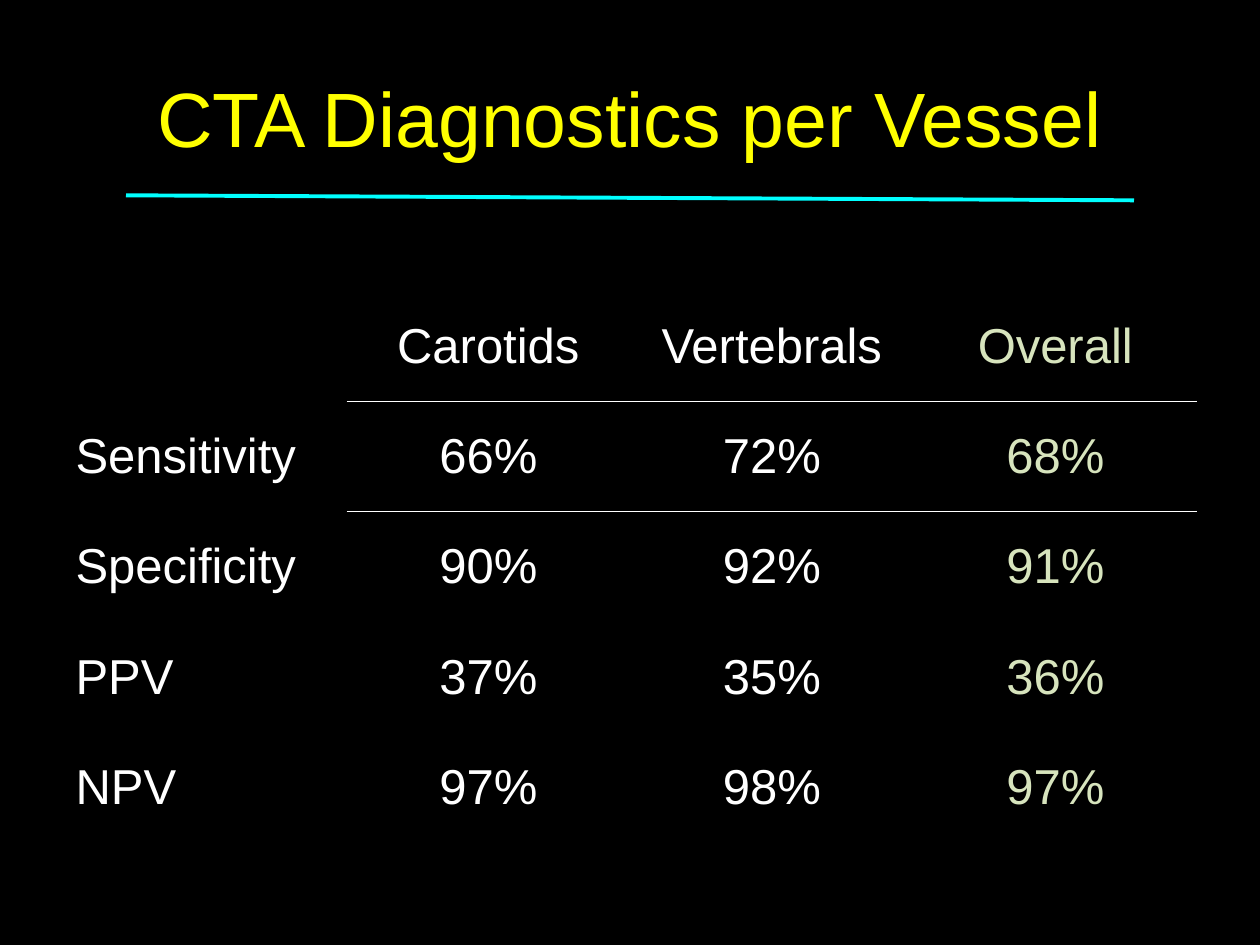
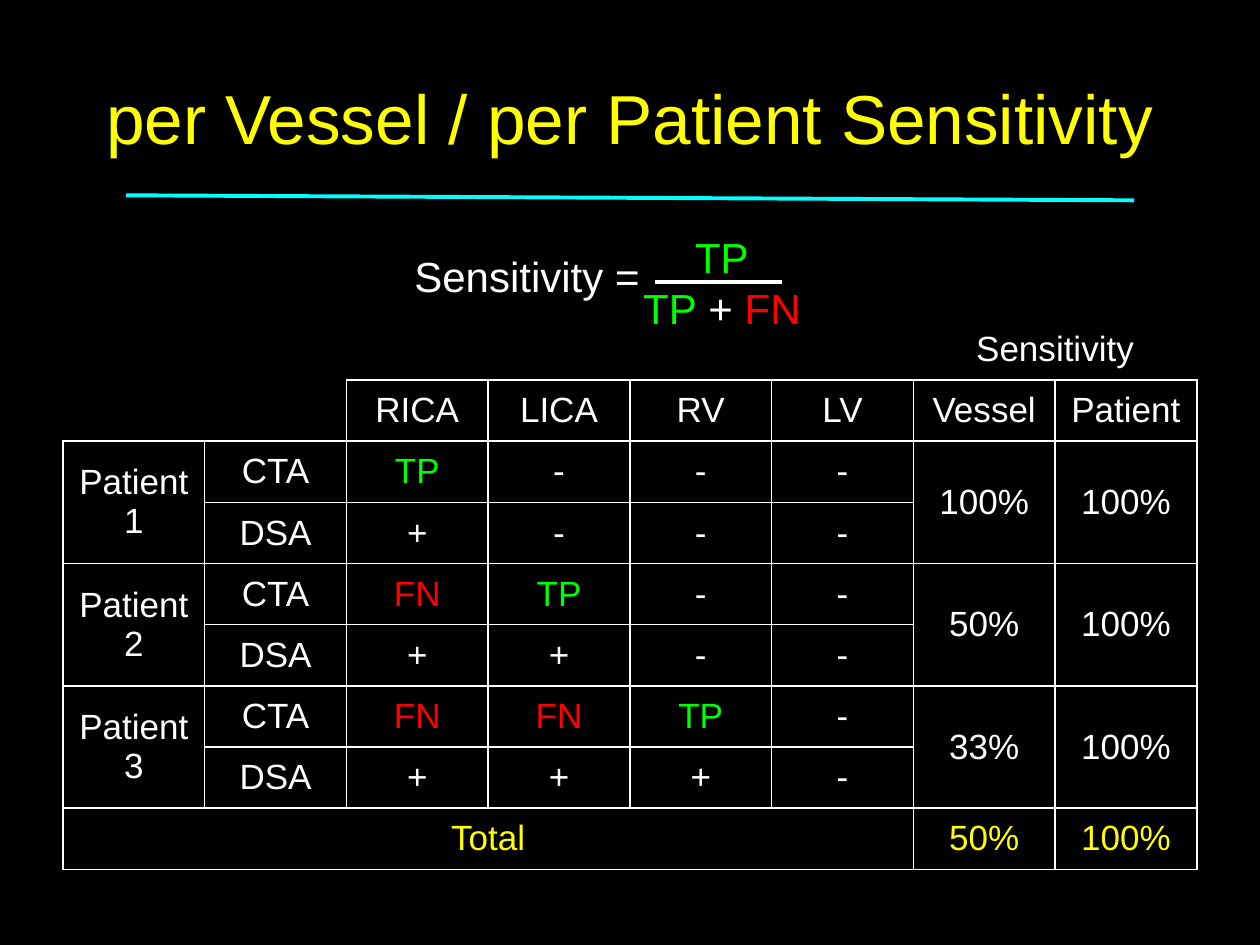
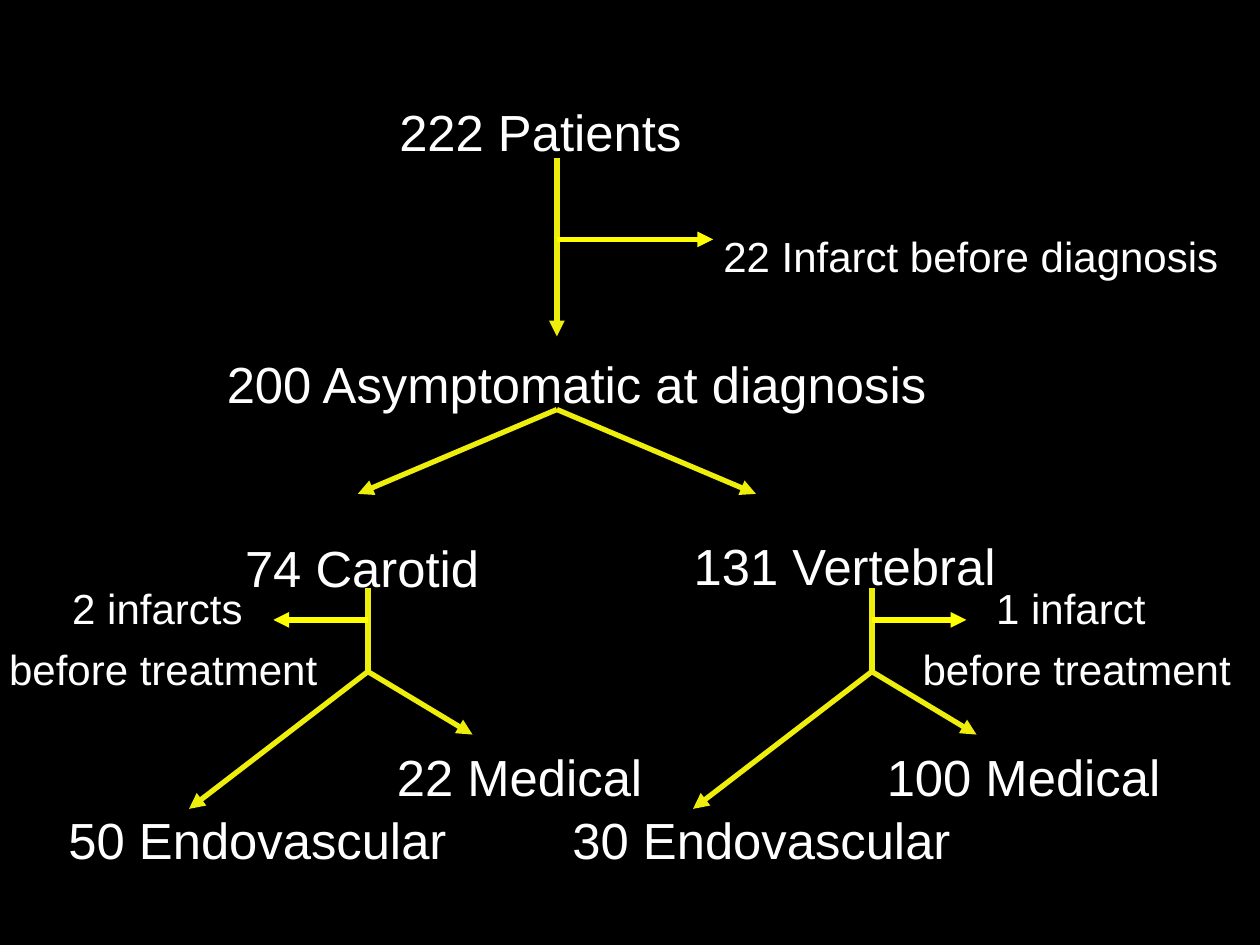
"""Build three slides on CTA diagnostics, sensitivity and patient flow."""
from collections.abc import Callable
from dataclasses import dataclass

from lxml import etree
from pptx import Presentation
from pptx import util as u
from pptx.dml import color
from pptx.enum import shapes, text
from pptx.oxml import ns
from pptx.slide import Slide

COLORS = {
    "black": "000000", "white": "FFFFFF", "yellow": "FFFF00", "gold": "EEEE0C",
    "cyan": "00FFFF", "sage": "D7E4BD", "green": "00FF00", "red": "FF0000",
}
FONT = "Arial"
OUTCOME_COLORS = {"TP": "green", "FN": "red"}
NEIGHBORS = {"L": (0, -1), "R": (0, 1), "T": (-1, 0), "B": (1, 0)}
CENTER = text.PP_ALIGN.CENTER
LEFT = text.PP_ALIGN.LEFT
Span = tuple[str, str]


@dataclass
class Label:
    """A text box whose paragraphs are lists of coloured spans."""
    paragraphs: list[list[Span]]
    left: float
    top: float
    width: float
    height: float
    size: float = 29
    align: text.PP_ALIGN = CENTER
    line_spacing: float = 1.0
    space_before: float = 0
    margin_top: float = 0.05
    wrap: bool = True
    middle: bool = False


@dataclass
class Line:
    """A straight line with an optional arrowhead at its end."""
    start: tuple[float, float]
    end: tuple[float, float]
    color: str = "gold"
    width: float = 3
    arrow: bool = True


@dataclass
class Grid:
    """A table with its rule widths and text colours given by position."""
    rows: list[list[str]]
    top: float
    height: float
    size: float
    rule: Callable[[int, int, str], float]
    text_color: Callable[[int, int, str], str]
    merges: tuple[tuple[int, int, int, int], ...] = ()
    left_column: bool = False


def rgb(name: str) -> color.RGBColor:
    return color.RGBColor.from_string(COLORS[name])


def style_font(font, size: float, name: str) -> None:
    font.name = FONT
    font.size = u.Pt(size)
    font.color.rgb = rgb(name)


def draw_label(page: Slide, label: Label) -> None:
    box = page.shapes.add_textbox(*map(u.Inches, (label.left, label.top, label.width, label.height)))
    frame = box.text_frame
    frame.word_wrap = label.wrap
    frame.margin_top = u.Inches(label.margin_top)
    if label.middle:
        frame.vertical_anchor = text.MSO_ANCHOR.MIDDLE
    for index, spans in enumerate(label.paragraphs):
        para = frame.add_paragraph() if index else frame.paragraphs[0]
        para.alignment = label.align
        para.line_spacing = label.line_spacing
        if index:
            para.space_before = u.Pt(label.space_before)
        style_font(para.font, label.size, spans[0][1])
        for words, name in spans:
            span = para.add_run()
            span.text = words
            if name != spans[0][1]:
                span.font.color.rgb = rgb(name)


def draw_line(page: Slide, line: Line) -> None:
    connector = page.shapes.add_connector(
        shapes.MSO_CONNECTOR.STRAIGHT, *map(u.Inches, (*line.start, *line.end)))
    connector.line.color.rgb = rgb(line.color)
    connector.line.width = u.Pt(line.width)
    properties = connector.element.spPr
    if line.arrow:
        etree.SubElement(properties.find(ns.qn("a:ln")), ns.qn("a:tailEnd"), type="triangle")
    etree.SubElement(properties, ns.qn("a:effectLst"))


def set_border(cell_properties, side: str, width: float) -> None:
    border = etree.SubElement(cell_properties, ns.qn(f"a:ln{side}"), w=str(int(u.Pt(width))))
    if width:
        fill = etree.SubElement(border, ns.qn("a:solidFill"))
        etree.SubElement(fill, ns.qn("a:srgbClr"), val=COLORS["white"])
    else:
        etree.SubElement(border, ns.qn("a:noFill"))


def draw_grid(page: Slide, grid: Grid) -> None:
    row_count, column_count = len(grid.rows), len(grid.rows[0])
    table = page.shapes.add_table(
        row_count, column_count, *map(u.Inches, (0.5, grid.top, 9, grid.height))).table
    table.first_row = table.horz_banding = False
    for row, words_in_row in enumerate(grid.rows):
        for column, words in enumerate(words_in_row):
            cell = table.cell(row, column)
            cell.text = words
            cell.vertical_anchor = text.MSO_ANCHOR.MIDDLE
            para = cell.text_frame.paragraphs[0]
            para.alignment = LEFT if grid.left_column and column == 0 else CENTER
            style_font(para.font, grid.size, grid.text_color(row, column, words))
            cell_properties = cell._tc.get_or_add_tcPr()
            for side in NEIGHBORS:
                set_border(cell_properties, side, grid.rule(row, column, side))
            cell.fill.background()
    for row, column, last_row, last_column in grid.merges:
        table.cell(row, column).merge(table.cell(last_row, last_column))


def add_page(deck) -> Slide:
    page = deck.slides.add_slide(deck.slide_layouts[6])
    page.background.fill.solid()
    page.background.fill.fore_color.rgb = rgb("black")
    return page


def draw_title(page: Slide, title: str, size: float) -> None:
    draw_label(page, Label([[(title, "yellow")]], 0.5, 0.3, 9, 1.25, size, middle=True))
    draw_line(page, Line((1, 1.55), (9, 1.59), "cyan", 2.25, arrow=False))


def diagnostics_rule(row: int, column: int, side: str) -> float:
    row_above = {"T": row - 1, "B": row}.get(side)
    return {0: 1, 1: 0.5}.get(row_above, 0) if column else 0


def build_diagnostics(deck) -> None:
    page = add_page(deck)
    draw_title(page, "CTA Diagnostics per Vessel", 44)
    rows = [
        ["", "Carotids", "Vertebrals", "Overall"],
        ["Sensitivity", "66%", "72%", "68%"],
        ["Specificity", "90%", "92%", "91%"],
        ["PPV", "37%", "35%", "36%"],
        ["NPV", "97%", "98%", "97%"],
    ]
    draw_grid(page, Grid(
        rows, 2.31, 4.38, 28, diagnostics_rule,
        lambda row, column, words: "sage" if column == 3 else "white", left_column=True))


def is_boxed(row: int, column: int) -> bool:
    return row >= 2 or (row == 1 and column >= 2)


def sensitivity_rule(row: int, column: int, side: str) -> float:
    down, right = NEIGHBORS[side]
    neighbor = (row + down, column + right)
    inside = neighbor[0] >= 0 and 0 <= neighbor[1] < 8
    return 1 if is_boxed(row, column) or (inside and is_boxed(*neighbor)) else 0


def build_sensitivity(deck) -> None:
    page = add_page(deck)
    draw_title(page, "per Vessel / per Patient Sensitivity", 39.6)
    rows = [
        ["", "", "", "", "", "", "Sensitivity", ""],
        ["", "", "RICA", "LICA", "RV", "LV", "Vessel", "Patient"],
        ["Patient 1", "CTA", "TP", "-", "-", "-", "100%", "100%"],
        ["", "DSA", "+", "-", "-", "-", "", ""],
        ["Patient 2", "CTA", "FN", "TP", "-", "-", "50%", "100%"],
        ["", "DSA", "+", "+", "-", "-", "", ""],
        ["Patient 3", "CTA", "FN", "FN", "TP", "-", "33%", "100%"],
        ["", "DSA", "+", "+", "+", "-", "", ""],
        ["Total", "", "", "", "", "", "50%", "100%"],
    ]
    patient_merges = tuple(
        (row, column, row + 1, column) for row in (2, 4, 6) for column in (0, 6, 7))
    draw_grid(page, Grid(
        rows, 2.53, 4.37, 20, sensitivity_rule,
        lambda row, column, words: "yellow" if row == 8 else OUTCOME_COLORS.get(words, "white"),
        ((0, 0, 0, 5), (0, 6, 0, 7), (1, 0, 1, 1), (8, 0, 8, 5)) + patient_merges))
    draw_label(page, Label(
        [[("Sensitivity =", "white")]], 3.19, 1.94, 2.01, 0.5, 24, LEFT, wrap=False))
    fraction = [[("TP", "green")], [("TP", "green"), (" + ", "white"), ("FN", "red")]]
    draw_label(page, Label(fraction, 5, 1.79, 1.46, 0.91, 24, wrap=False))
    draw_line(page, Line((5.2, 2.24), (6.21, 2.24), "white", 2, arrow=False))


def draw_step(page: Slide, words: str, left: float, top: float, width: float, height: float,
              line_spacing: float = 1.0, size: float = 29) -> None:
    draw_label(page, Label([[(words, "white")]], left, top, width, height, size,
                           line_spacing=line_spacing, margin_top=0.09))


def draw_branch(page: Slide, shift: float, side: int, infarcts: str, note_left: float,
                endovascular: str, medical: str) -> None:
    trunk = 2.92 + shift
    draw_line(page, Line((trunk, 4.67), (trunk, 5.33), arrow=False))
    draw_line(page, Line((trunk, 5.33), (1.5 + shift, 6.42)))
    draw_line(page, Line((trunk, 5.33), (3.75 + shift, 5.83)))
    draw_line(page, Line((trunk, 4.92), (trunk + side * 0.75, 4.92), "yellow"))
    draw_step(page, endovascular, 0.17 + shift, 6.33, 3.75, 0.75)
    draw_step(page, medical, 2.25 + shift, 5.92, 3.75, 0.83, 0.8)
    note = [[(infarcts, "white")], [("before treatment", "white")]]
    draw_label(page, Label(note, note_left, 4.67, 4.25, 0, 24, space_before=6, margin_top=0))


def build_patient_flow(deck) -> None:
    page = add_page(deck)
    draw_step(page, "222 Patients", 2.58, 0.42, 3.42, 0.83, 1.6)
    draw_step(page, "22 Infarct before diagnosis", 5.58, 1.5, 4.25, 0.83, 1.6, 24)
    draw_step(page, "200 Asymptomatic at diagnosis", 1.58, 2.42, 6, 0.92, 1.6)
    draw_step(page, "74 Carotid", 1, 4.17, 3.75, 0.75)
    draw_step(page, "131 Vertebral", 4.83, 4.25, 3.75, 0.83, 0.8)
    for line in (
        Line((4.42, 1.25), (4.42, 1.92), arrow=False),
        Line((4.42, 1.33), (4.42, 2.67)),
        Line((4.42, 1.9), (5.66, 1.9), "yellow"),
        Line((4.42, 3.25), (2.84, 3.92)),
        Line((4.42, 3.25), (6, 3.92)),
    ):
        draw_line(page, line)
    draw_branch(page, 0, -1, "2 infarcts ", -0.83, "50 Endovascular", "22 Medical")
    draw_branch(page, 4, 1, "1 infarct ", 6.42, "30 Endovascular", "100 Medical")


def main() -> None:
    deck = Presentation()
    deck.slide_width, deck.slide_height = u.Inches(10), u.Inches(7.5)
    build_diagnostics(deck)
    build_sensitivity(deck)
    build_patient_flow(deck)
    deck.save("out.pptx")


if __name__ == "__main__":
    main()
